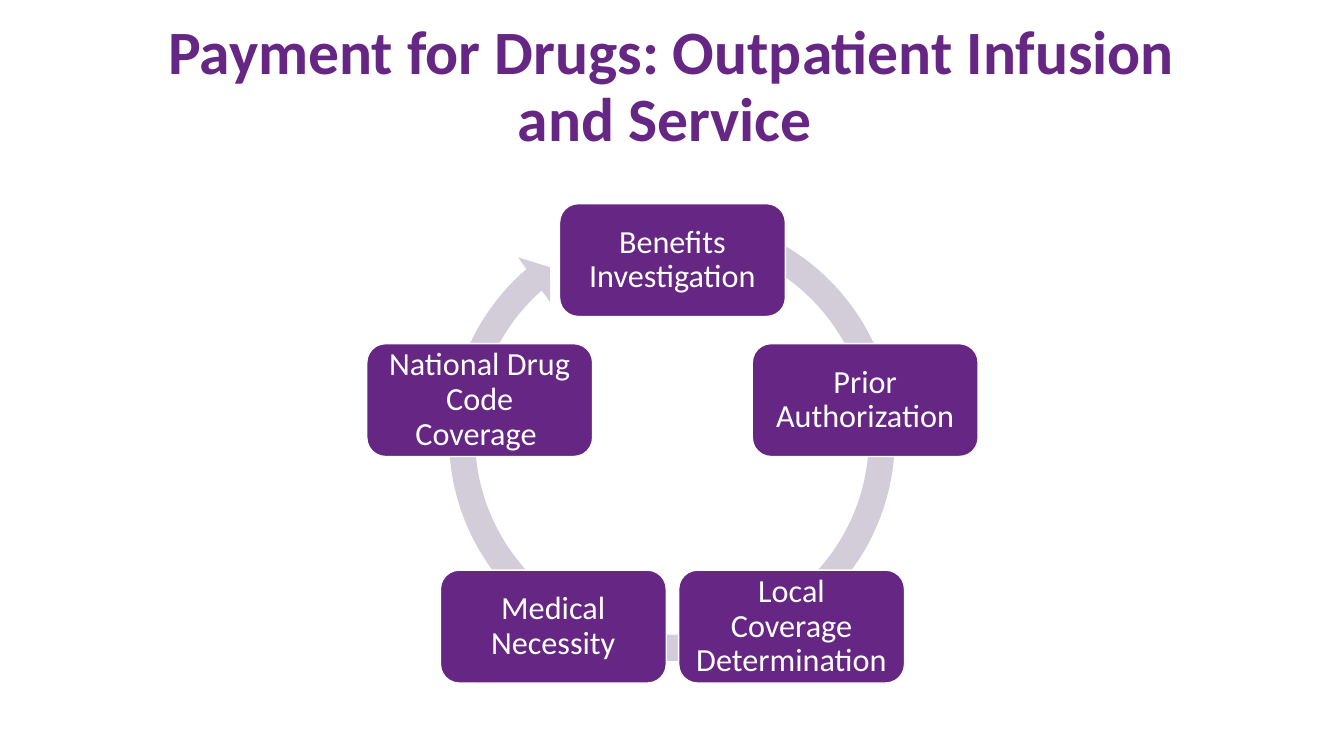
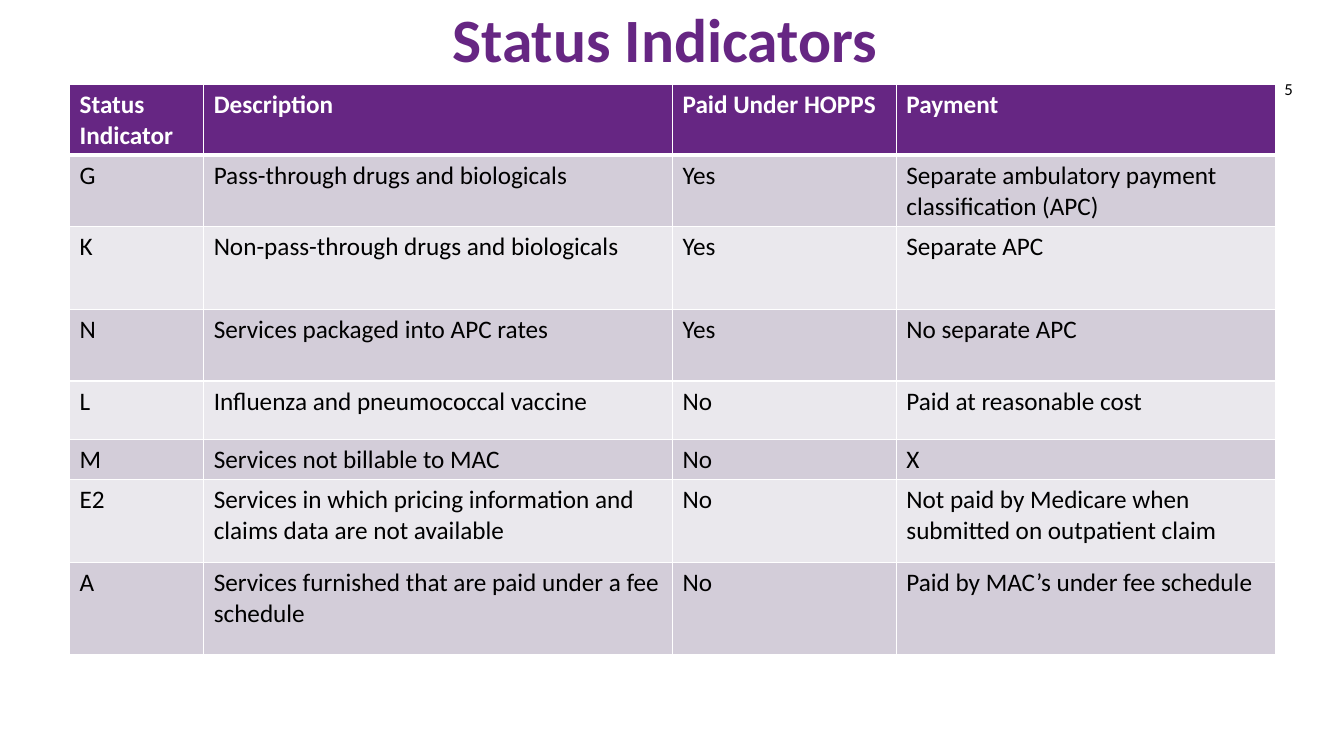
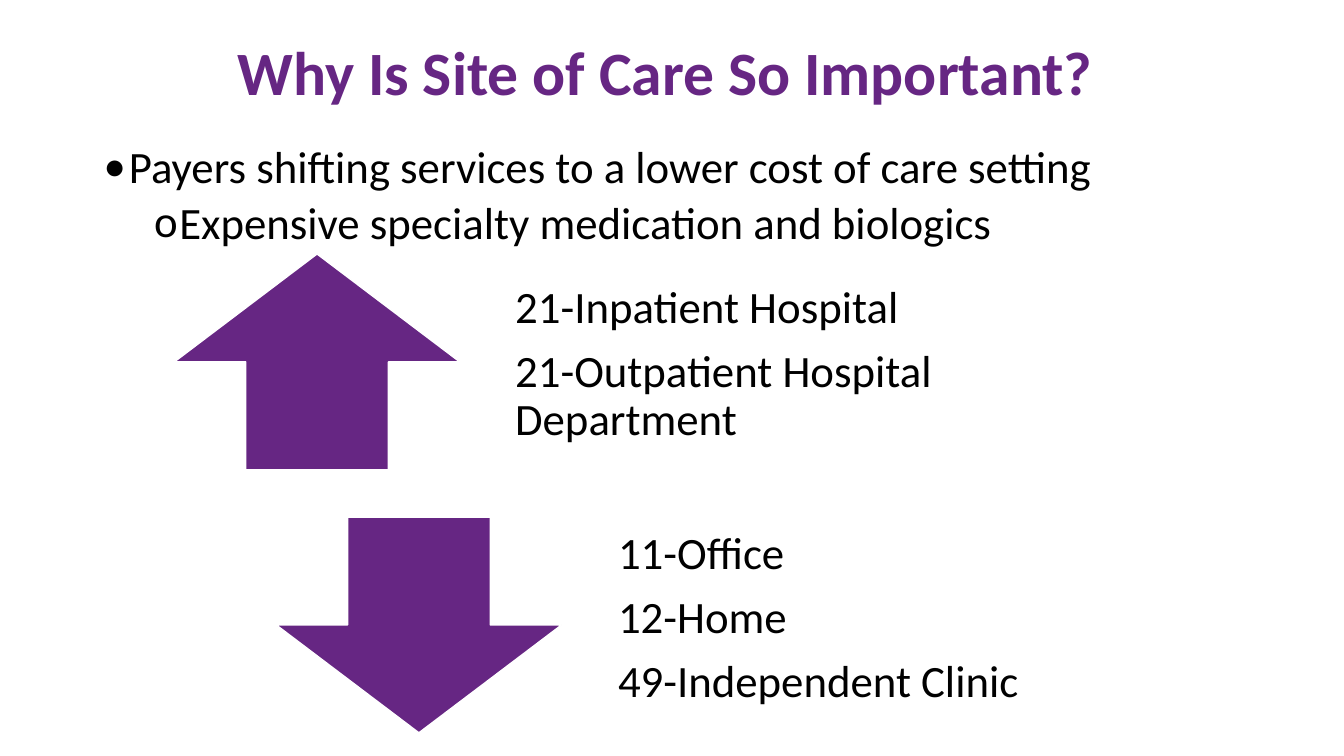
from math import cos, pi, sin

from lxml import etree
from pptx import Presentation
from pptx.dml.color import RGBColor
from pptx.enum.shapes import MSO_SHAPE
from pptx.enum.text import MSO_ANCHOR, PP_ALIGN
from pptx.oxml.ns import qn
from pptx.util import Inches, Pt

PURPLE = RGBColor(0x66, 0x26, 0x83)
LILAC = RGBColor(0xD3, 0xCD, 0xD9)
PALE_LILAC = RGBColor(0xEA, 0xE8, 0xED)
WHITE = RGBColor(0xFF, 0xFF, 0xFF)
BLACK = RGBColor(0x00, 0x00, 0x00)
FONT = "Calibri"

LEFT, CENTER = PP_ALIGN.LEFT, PP_ALIGN.CENTER
TOP, MIDDLE = MSO_ANCHOR.TOP, MSO_ANCHOR.MIDDLE
ROUNDED = MSO_SHAPE.ROUNDED_RECTANGLE
CYCLE_ARROW = MSO_SHAPE.CIRCULAR_ARROW
UP_ARROW, DOWN_ARROW = MSO_SHAPE.UP_ARROW, MSO_SHAPE.DOWN_ARROW

CYCLE_STEPS = [
    "Benefits Investigation",
    "Prior Authorization",
    "Local Coverage Determination",
    "Medical Necessity",
    "National Drug Code Coverage ",
]
STATUS_ROWS = [
    ("Status Indicator", "Description", "Paid Under HOPPS", "Payment"),
    ("G", "Pass-through drugs and biologicals", "Yes",
     "Separate ambulatory payment classification (APC)"),
    ("K", "Non-pass-through drugs and biologicals", "Yes", "Separate APC"),
    ("N", "Services packaged into APC rates", "Yes", "No separate APC"),
    ("L", "Influenza and pneumococcal vaccine", "No", "Paid at reasonable cost"),
    ("M", "Services not billable to MAC", "No", "X"),
    ("E2", "Services in which pricing information and claims data are not available",
     "No", "Not paid by Medicare when submitted on outpatient claim"),
    ("A", "Services furnished that are paid under a fee schedule", "No",
     "Paid by MAC’s under fee schedule"),
]
COLUMN_WIDTHS = [1.33, 4.65, 2.22, 3.76]
ROW_HEIGHTS = [0.7, 0.71, 0.82, 0.71, 0.58, 0.4, 0.82, 0.91]


# Text
def add_bullet(paragraph, mark, level):
    paragraph.level = level
    properties = paragraph._p.get_or_add_pPr()
    properties.set("marL", str(Inches(0.25 + 0.5 * level)))
    properties.set("indent", str(Inches(-0.25)))
    etree.SubElement(properties, qn("a:buFont")).set("typeface", FONT)
    etree.SubElement(properties, qn("a:buChar")).set("char", mark)


def write_text(frame, lines, size=32, color=BLACK, bold=False, align=LEFT,
               anchor=TOP, spacing=0.9, before=0, after=0, bullets="",
               insets=(0.1, 0.05, 0.1, 0.05)):
    frame.word_wrap = True
    frame.vertical_anchor = anchor
    (frame.margin_left, frame.margin_top,
     frame.margin_right, frame.margin_bottom) = map(Inches, insets)
    for index, line in enumerate(lines):
        paragraph = frame.add_paragraph() if index else frame.paragraphs[0]
        paragraph.alignment = align
        paragraph.line_spacing = spacing
        if index:
            paragraph.space_before = Pt(before)
        paragraph.space_after = Pt(after)
        if bullets:
            add_bullet(paragraph, bullets[index], index)
        run = paragraph.add_run()
        run.text = line
        run.font.name = FONT
        run.font.size = Pt(size)
        run.font.bold = bold
        run.font.color.rgb = color


def add_text(slide, box, lines, **text_format):
    text_box = slide.shapes.add_textbox(*map(Inches, box))
    write_text(text_box.text_frame, lines, **text_format)


def add_title(slide, box, title):
    add_text(slide, box, [title], size=44, color=PURPLE, bold=True,
             align=CENTER, anchor=MIDDLE)


# Shapes
def add_filled(slide, kind, box, fill=PURPLE, outlined=True):
    shape = slide.shapes.add_shape(kind, *map(Inches, box))
    shape.shadow.inherit = False
    shape.fill.solid()
    shape.fill.fore_color.rgb = fill
    if outlined:
        shape.line.color.rgb = WHITE
        shape.line.width = Pt(1)
    else:
        shape.line.fill.background()
    return shape


# Table
def set_borders(cell, bottom_width):
    properties = cell._tc.get_or_add_tcPr()
    widths = {"a:lnL": 1, "a:lnR": 1, "a:lnT": 1, "a:lnB": bottom_width}
    for position, (tag, width) in enumerate(widths.items()):
        border = etree.Element(qn(tag), w=str(Pt(width)))
        fill = etree.SubElement(border, qn("a:solidFill"))
        etree.SubElement(fill, qn("a:srgbClr")).set("val", str(WHITE))
        properties.insert(position, border)


def add_status_table(slide, left, top):
    table = slide.shapes.add_table(
        len(STATUS_ROWS), len(COLUMN_WIDTHS), Inches(left), Inches(top),
        Inches(sum(COLUMN_WIDTHS)), Inches(sum(ROW_HEIGHTS))).table
    for column, width in zip(table.columns, COLUMN_WIDTHS):
        column.width = Inches(width)
    for row, height in zip(table.rows, ROW_HEIGHTS):
        row.height = Inches(height)
    for r, texts in enumerate(STATUS_ROWS):
        header = r == 0
        band = PURPLE if header else (LILAC if r % 2 else PALE_LILAC)
        for c, text in enumerate(texts):
            cell = table.cell(r, c)
            cell.fill.solid()
            cell.fill.fore_color.rgb = band
            # The rule under the header is thicker than the others
            set_borders(cell, 3 if header else 1)
            write_text(cell.text_frame, [text], size=18, bold=header,
                       color=WHITE if header else BLACK, spacing=1.0)


# Slides
def build_payment_cycle(slide):
    ring = add_filled(slide, CYCLE_ARROW, (4.31, 1.99, 4.71, 4.71),
                      fill=LILAC, outlined=False)
    for index, value in enumerate((0.055, 3.307, 137.364, 174.101, 0.058)):
        ring.adjustments[index] = value

    # Steps stand at equal angles, clockwise from the top
    width, height = 2.24, 1.12
    center_x, center_y, radius = 6.67, 4.59, 2.01
    for index, step in enumerate(CYCLE_STEPS):
        angle = 2 * pi * index / len(CYCLE_STEPS)
        left = center_x + radius * sin(angle) - width / 2
        top = center_y - radius * cos(angle) - height / 2
        node = add_filled(slide, ROUNDED, (left, top, width, height))
        write_text(node.text_frame, [step], size=23, color=WHITE, align=CENTER,
                   anchor=MIDDLE, insets=(0.1, 0.1, 0.1, 0.1))
    add_title(slide, (1.09, 0.15, 11.15, 1.45),
              "Payment for Drugs: Outpatient Infusion and Service ")


def build_status_indicators(slide):
    add_title(slide, (1.47, -0.07, 10.39, 0.99), "Status Indicators ")
    add_status_table(slide, 0.69, 0.84)
    add_text(slide, (12.64, 0.73, 0.36, 0.3), ["5"], size=12, spacing=1.0)


def build_site_of_care(slide):
    add_title(slide, (0.92, 0.1, 11.5, 1.29), "Why Is Site of Care So Important? ")
    add_text(slide, (0.93, 1.39, 11.5, 1.1),
             ["Payers shifting services to a lower cost of care setting",
              "Expensive specialty medication and biologics"],
             before=5, bullets="•o")
    # Costlier sites beside the up arrow, cheaper ones beside the down arrow
    site_groups = [
        (UP_ARROW, 1.73, 2.52, 4.86, 2.51,
         ["21-Inpatient Hospital", "21-Outpatient Hospital Department"]),
        (DOWN_ARROW, 2.74, 5.13, 5.88, 5.03,
         ["11-Office", "12-Home", "49-Independent Clinic"]),
    ]
    for arrow, arrow_left, arrow_top, left, top, sites in site_groups:
        add_filled(slide, arrow, (arrow_left, arrow_top, 2.83, 2.14))
        add_text(slide, (left, top, 6.44, 2.47), sites, anchor=MIDDLE, after=11,
                 insets=(0.25, 0, 0.25, 0.25))


def main():
    deck = Presentation()
    deck.slide_width, deck.slide_height = Inches(13.33), Inches(7.5)
    blank = deck.slide_layouts[6]
    for build in (build_payment_cycle, build_status_indicators, build_site_of_care):
        build(deck.slides.add_slide(blank))
    deck.save("out.pptx")


if __name__ == "__main__":
    main()
